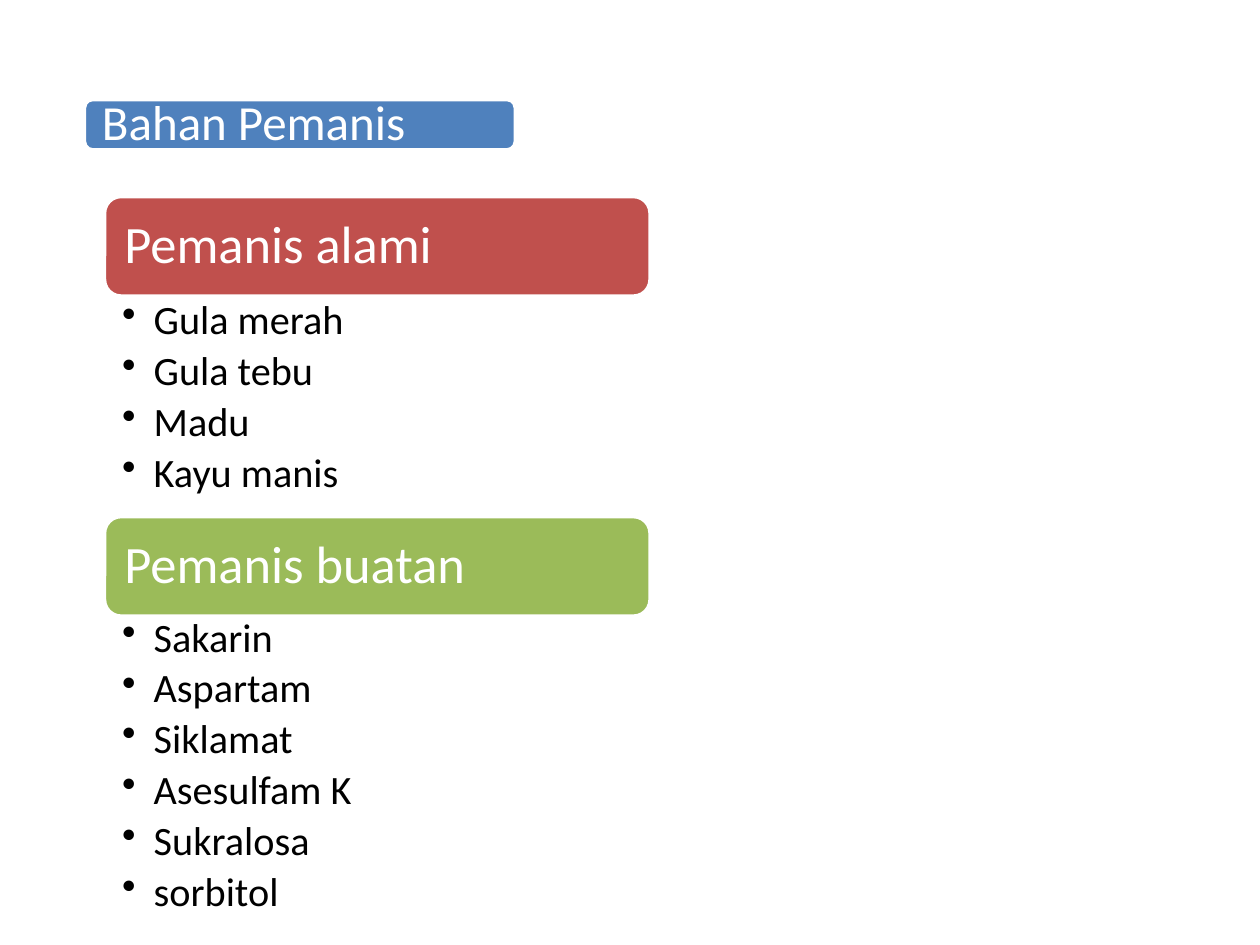
from dataclasses import dataclass

from lxml.etree import SubElement
from pptx import Presentation
from pptx.dml.color import RGBColor
from pptx.enum.shapes import MSO_SHAPE
from pptx.enum.text import MSO_ANCHOR, PP_ALIGN
from pptx.oxml.ns import qn
from pptx.util import Inches, Pt


@dataclass(frozen=True)
class Theme:
    font: str = "Calibri"
    blue: str = "4F81BD"
    red: str = "C0504D"
    green: str = "9BBB59"
    white: str = "FFFFFF"
    black: str = "000000"
    title_size: int = 28
    heading_size: int = 30
    item_size: int = 23
    item_gap: float = 4.2
    outline: int = 2


class SlideBuilder:
    def __init__(self, page, theme):
        self.page = page
        self.theme = theme

    def set_frame(self, frame, anchor, margins):
        left, top, right, bottom = (Inches(margin) for margin in margins)
        formats = {
            "word_wrap": True,
            "vertical_anchor": anchor,
            "margin_left": left,
            "margin_top": top,
            "margin_right": right,
            "margin_bottom": bottom,
        }
        for name, value in formats.items():
            setattr(frame, name, value)

    def add_span(self, para, text, size, color):
        para.alignment = PP_ALIGN.LEFT
        para.line_spacing = 0.9
        span = para.add_run()
        span.text = text
        for name, value in {"name": self.theme.font, "size": Pt(size)}.items():
            setattr(span.font, name, value)
        span.font.color.rgb = RGBColor.from_string(color)

    def banner(self, text, area, color, size):
        box = self.page.shapes.add_shape(
            MSO_SHAPE.ROUNDED_RECTANGLE, *(Inches(length) for length in area)
        )
        box.shadow.inherit = False
        box.fill.solid()
        box.fill.fore_color.rgb = RGBColor.from_string(color)
        box.line.color.rgb = RGBColor.from_string(self.theme.white)
        box.line.width = Pt(self.theme.outline)
        self.set_frame(box.text_frame, MSO_ANCHOR.MIDDLE, [0.12] * 4)
        self.add_span(box.text_frame.paragraphs[0], text, size, self.theme.white)

    def bullet_list(self, items, area):
        box = self.page.shapes.add_textbox(*(Inches(length) for length in area))
        frame = box.text_frame
        self.set_frame(frame, MSO_ANCHOR.TOP, (0.14, 0.04, 0.23, 0.04))
        for index, item in enumerate(items):
            para = frame.add_paragraph() if index else frame.paragraphs[0]
            self.add_span(para, item, self.theme.item_size, self.theme.black)
            para.level = 1
            para.space_after = Pt(self.theme.item_gap)
            properties = para._p.get_or_add_pPr()
            for name, value in {"marL": 0.25, "indent": -0.25}.items():
                properties.set(name, str(Inches(value)))
            SubElement(properties, qn("a:buChar")).set("char", "•")


def main():
    theme = Theme()
    deck = Presentation()
    deck.slide_width, deck.slide_height = Inches(10), Inches(7.5)
    builder = SlideBuilder(deck.slides.add_slide(deck.slide_layouts[6]), theme)

    builder.banner("Bahan Pemanis", (0.67, 0.79, 3.42, 0.4), theme.blue, theme.title_size)

    left, width, heading_height = 0.83, 4.33, 0.79
    sections = [
        ("Pemanis alami", theme.red, 1.56, 2.34, 1.73,
         ["Gula merah", "Gula tebu", "Madu", "Kayu manis"]),
        ("Pemanis buatan", theme.green, 4.1, 4.86, 2.58,
         ["Sakarin", "Aspartam", "Siklamat", "Asesulfam K", "Sukralosa", "sorbitol"]),
    ]
    for heading, color, top, list_top, list_height, items in sections:
        builder.banner(heading, (left, top, width, heading_height), color, theme.heading_size)
        builder.bullet_list(items, (left, list_top, width, list_height))

    deck.save("out.pptx")


if __name__ == "__main__":
    main()
